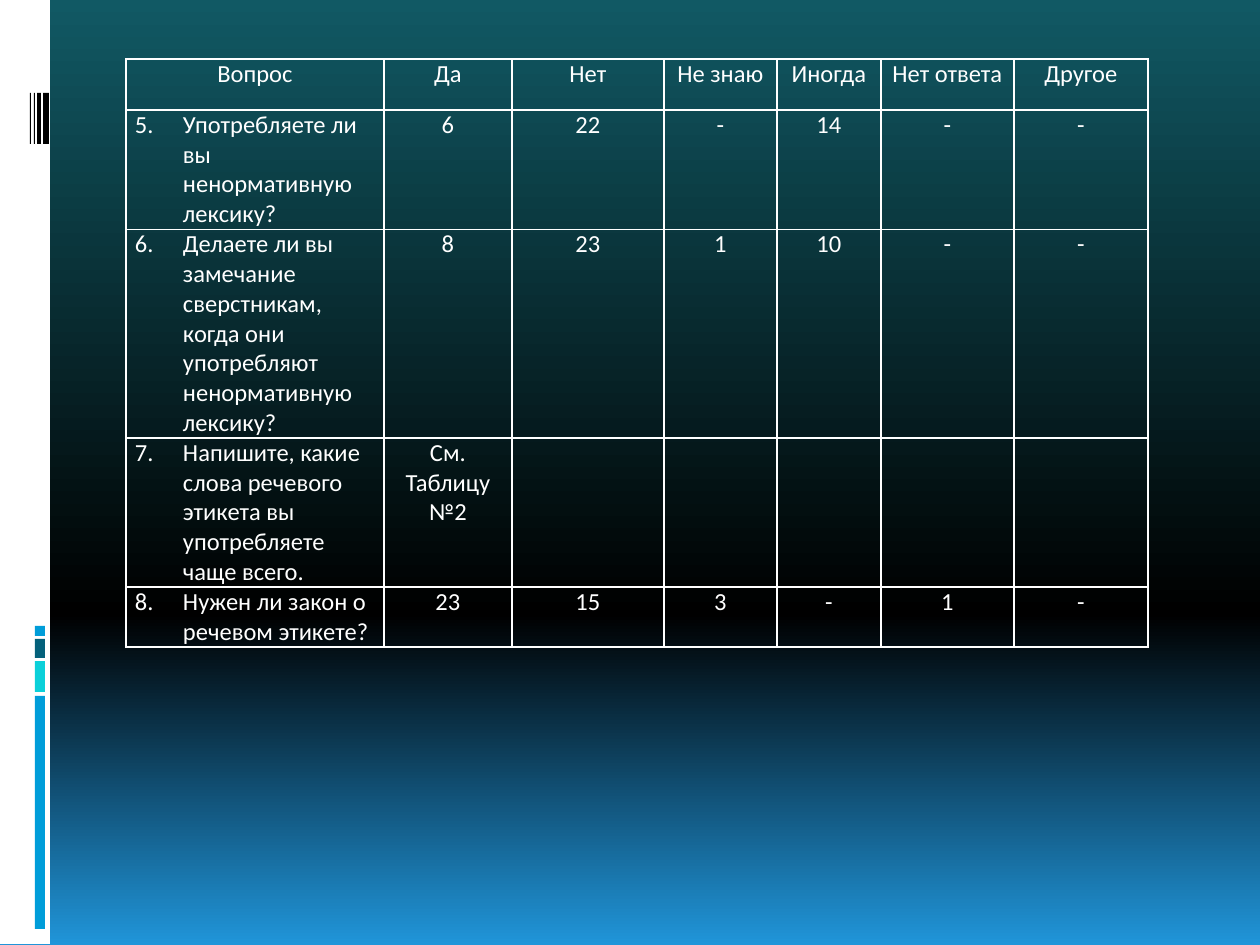
from copy import deepcopy

from lxml.etree import SubElement
from pptx import Presentation
from pptx.dml.color import RGBColor
from pptx.enum.shapes import MSO_SHAPE
from pptx.enum.text import PP_ALIGN
from pptx.oxml.ns import qn
from pptx.util import Pt

PX = 914400 // 126

WHITE = RGBColor(0xFF, 0xFF, 0xFF)
BLACK = RGBColor(0x00, 0x00, 0x00)
BLUE = RGBColor(0x00, 0x9D, 0xD9)
CYAN = RGBColor(0x0B, 0xD0, 0xD9)
TEAL = RGBColor(0x04, 0x61, 0x7B)
SKY = RGBColor(0x20, 0x95, 0xD9)
DEEP_TEAL = RGBColor(0x11, 0x59, 0x64)

BACKGROUND = [(0, DEEP_TEAL), (0.65, BLACK), (1, SKY)]

# Side decoration: left, top, width, height, colour
BARS = [
    (0, 0, 50, 944, WHITE),
    (35, 696, 10, 233, BLUE),
    (35, 661, 10, 31, CYAN),
    (35, 639, 10, 19, TEAL),
    (35, 626, 10, 10, BLUE),
    (43, 93, 6, 51, BLACK),
    (37, 93, 4, 51, BLACK),
    (34, 93, 1, 51, BLACK),
    (30, 93, 1, 51, BLACK),
]

HEADER = ["Вопрос", "Да", "Нет", "Не знаю", "Иногда", "Нет ответа", "Другое"]
QUESTIONS = [
    ("5.\tУпотребляете ли вы ненормативную лексику?", "6", "22", "-", "14", "-", "-"),
    ("6.\tДелаете ли вы замечание сверстникам, когда они употребляют "
     "ненормативную лексику?", "8", "23", "1", "10", "-", "-"),
    ("7.\tНапишите, какие слова речевого этикета вы употребляете чаще всего.",
     "См. Таблицу №2", "", "", "", "", ""),
    ("8.\tНужен ли закон о речевом этикете?", "23", "15", "3", "-", "1", "-"),
]
COLUMN_WIDTHS = [258, 128, 152, 113, 104, 133, 134]
ROW_HEIGHTS = [51, 119, 208, 149, 59]
TABLE_LEFT, TABLE_TOP = 126, 59
CELL_INSET, HANGING, TAB_STOP = 9, 48, 41


def paint_background(page):
    fill = page.background.fill
    fill.gradient()
    fill.gradient_angle = 270
    stop_list = next(page.element.iter(qn("a:gsLst")))
    stop_list.append(deepcopy(stop_list[-1]))
    for stop, (position, color) in zip(fill.gradient_stops, BACKGROUND):
        stop.position = position
        stop.color.rgb = color


def add_bar(page, left, top, width, height, color):
    bar = page.shapes.add_shape(
        MSO_SHAPE.RECTANGLE, *(value * PX for value in (left, top, width, height)))
    bar.shadow.inherit = False
    bar.fill.solid()
    bar.fill.fore_color.rgb = color
    bar.line.fill.background()


def draw_borders(cell, color=WHITE, width=1):
    properties = cell._tc.get_or_add_tcPr()
    for side in ("a:lnL", "a:lnR", "a:lnT", "a:lnB"):
        line = SubElement(properties, qn(side), w=str(Pt(width)))
        SubElement(SubElement(line, qn("a:solidFill")), qn("a:srgbClr"), val=str(color))


def write(frame, text, size=14, color=WHITE, align=PP_ALIGN.CENTER, hanging=0, tab=0):
    para = frame.paragraphs[0]
    para.alignment = align
    if hanging:
        properties = para._p.get_or_add_pPr()
        properties.set("marL", str(hanging * PX))
        properties.set("indent", str(-hanging * PX))
        tabs = SubElement(properties, qn("a:tabLst"))
        SubElement(tabs, qn("a:tab"), pos=str(tab * PX), algn="l")
    span = para.add_run()
    span.text = text
    span.font.name = "Calibri"
    span.font.size = Pt(size)
    span.font.bold = False
    span.font.color.rgb = color


def add_survey_table(page):
    rows = [HEADER, *QUESTIONS]
    table = page.shapes.add_table(
        len(rows), len(HEADER), TABLE_LEFT * PX, TABLE_TOP * PX,
        sum(COLUMN_WIDTHS) * PX, sum(ROW_HEIGHTS) * PX).table
    table.first_row = table.horz_banding = False
    for column, width in zip(table.columns, COLUMN_WIDTHS):
        column.width = width * PX
    for row, height in zip(table.rows, ROW_HEIGHTS):
        row.height = height * PX

    for row_index, texts in enumerate(rows):
        for column_index, text in enumerate(texts):
            cell = table.cell(row_index, column_index)
            draw_borders(cell)
            cell.fill.background()
            cell.margin_left = cell.margin_right = CELL_INSET * PX
            cell.margin_top = cell.margin_bottom = 0
            if row_index and column_index == 0:
                write(cell.text_frame, text, align=PP_ALIGN.LEFT,
                      hanging=HANGING, tab=TAB_STOP)
            elif text:
                write(cell.text_frame, text)


def main():
    deck = Presentation()
    deck.slide_width, deck.slide_height = 1260 * PX, 945 * PX
    page = deck.slides.add_slide(deck.slide_layouts[6])
    paint_background(page)
    for bar in BARS:
        add_bar(page, *bar)
    add_survey_table(page)
    deck.save("out.pptx")


if __name__ == "__main__":
    main()
